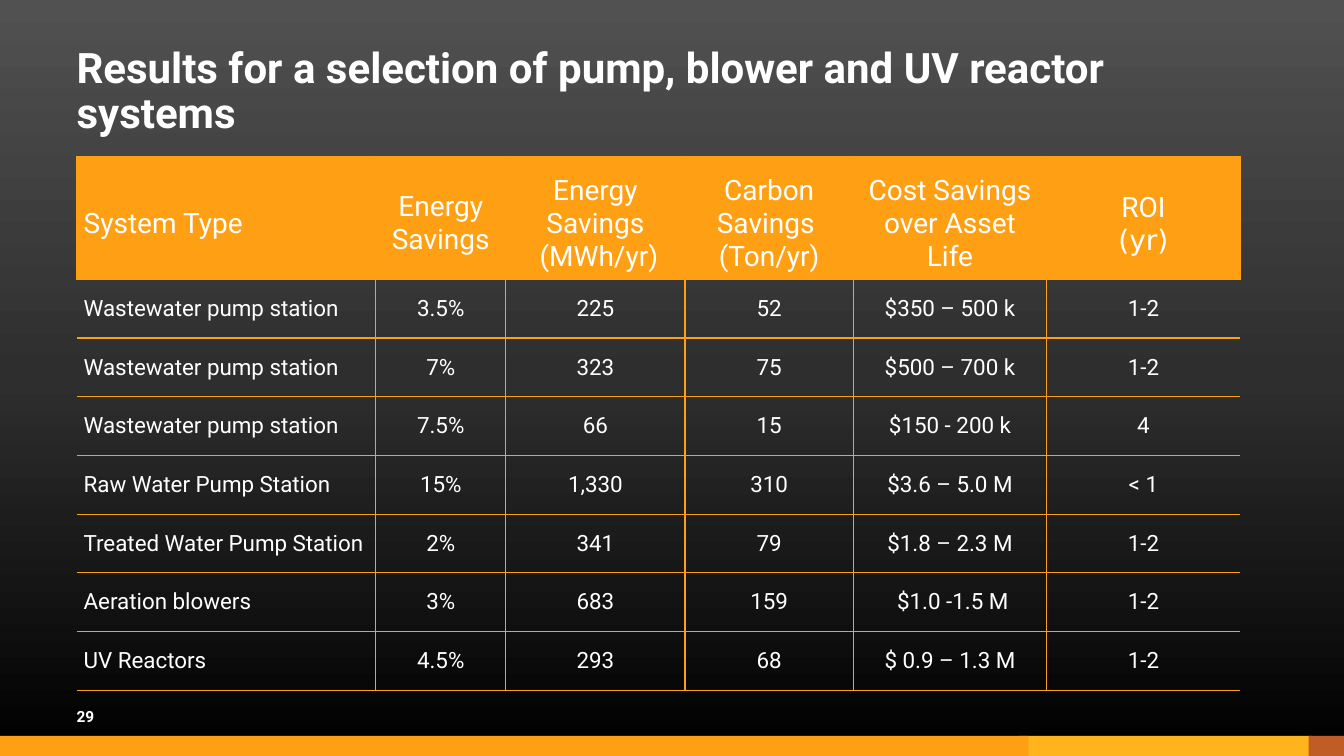
from copy import deepcopy
from dataclasses import dataclass

from pptx import Presentation, util as u
from pptx.dml.color import RGBColor
from pptx.enum import shapes, text
from pptx.oxml import parse_xml
from pptx.oxml.ns import nsdecls, qn


@dataclass(frozen=True)
class Theme:
    orange: str = "FFA014"
    amber: str = "FFB41E"
    rust: str = "C05D27"
    white: str = "FFFFFF"
    backdrop: tuple = ("515151", "2E2E2E", "000000")
    font: str = "Roboto"
    unit_font: str = "DejaVu Sans"
    title: int = 30
    header: int = 20
    body: int = 16
    number: int = 11


T = Theme()
W, H = u.Inches(13.33), u.Inches(7.5)
LEFT = 5.7
COLUMNS = [2.97, 1.29, 1.78, 1.67, 1.92, 1.92]
ROWS = [21] + [10] * 7
HEADER = ["System Type", "Energy Savings", "Energy Savings\n (MWh/yr)",
          "Carbon Savings \n(Ton/yr)", "Cost Savings over Asset Life", "ROI\n(yr)"]
SYSTEMS = [
    ["Wastewater pump station", "3.5%", "225", "52", "$350 – 500 k", "1-2"],
    ["Wastewater pump station", "7%", "323", "75", "$500 – 700 k", "1-2"],
    ["Wastewater pump station", "7.5%", "66", "15", "$150 - 200 k", "4"],
    ["Raw Water Pump Station", "15%", "1,330", "310", "$3.6 – 5.0 M", "< 1"],
    ["Treated Water Pump Station", "2%", "341", "79", "$1.8 – 2.3 M", "1-2"],
    ["Aeration blowers", "3%", "683", "159", " $1.0 -1.5 M", "1-2"],
    ["UV Reactors", "4.5%", "293", "68", "$ 0.9 – 1.3 M", "1-2"],
]


def box(left, top, width, height):
    return [round(share * side / 100)
            for share, side in zip((left, top, width, height), (W, H, W, H))]


def rgb(color):
    return RGBColor.from_string(color)


def format_paragraph(p, size, bold=False, align=text.PP_ALIGN.LEFT):
    p.alignment = align
    p.font.name, p.font.size, p.font.bold = T.font, u.Pt(size), bold
    p.font.color.rgb = rgb(T.white)


def set_background(s):
    fill = s.background.fill
    fill.gradient()
    fill.gradient_angle = 270
    stops = s._element.find(".//" + qn("a:gsLst"))
    stops.insert(1, deepcopy(stops[0]))
    for stop, color, position in zip(fill.gradient_stops, T.backdrop, (0, 0.5, 1)):
        stop.color.rgb = rgb(color)
        stop.position = position


def add_bar(s, left, width, color):
    sp = s.shapes.add_shape(shapes.MSO_SHAPE.RECTANGLE, *box(left, 97.33, width, 2.67))
    sp.shadow.inherit = False
    sp.fill.solid()
    sp.fill.fore_color.rgb = rgb(color)
    sp.line.fill.background()


def fill_text(sp, words, size, anchor):
    tf = sp.text_frame
    tf.text = words
    tf.word_wrap = True
    tf.auto_size = text.MSO_AUTO_SIZE.NONE
    tf.vertical_anchor = anchor
    tf.margin_left = tf.margin_right = tf.margin_top = tf.margin_bottom = 0
    p = tf.paragraphs[0]
    format_paragraph(p, size, True)
    return p


def add_title(s, words):
    sp = s.shapes.title
    sp.left, sp.top, sp.width, sp.height = box(LEFT, 8, 88.6, 8.4)
    fill_text(sp, words, T.title, text.MSO_ANCHOR.MIDDLE).line_spacing = 0.9


def add_slide_number(s, number):
    sp = s.shapes.add_textbox(*box(LEFT, 92, 6, 4))
    fill_text(sp, number, T.number, text.MSO_ANCHOR.BOTTOM)


def set_borders(cell, open_sides):
    tc_pr = cell._tc.get_or_add_tcPr()
    for i, side in enumerate("LRTB"):
        paint = ("<a:noFill/>" if side in open_sides else
                 f'<a:solidFill><a:srgbClr val="{T.orange}"/></a:solidFill>')
        tc_pr.insert(i, parse_xml(
            f'<a:ln{side} {nsdecls("a")} w="{u.Pt(1)}">{paint}</a:ln{side}>'))


def format_cell(cell, words, is_header, column):
    cell.text = words
    cell.vertical_anchor = text.MSO_ANCHOR.MIDDLE
    cell.margin_left = cell.margin_right = u.Inches(0.07)
    cell.margin_top = u.Inches(0.12 if is_header else 0)
    cell.margin_bottom = 0
    for p in cell.text_frame.paragraphs:
        format_paragraph(p, T.header if is_header else T.body,
                         align=text.PP_ALIGN.CENTER if column else text.PP_ALIGN.LEFT)
        if not is_header:
            p.space_before = p.space_after = u.Pt(6)
    if is_header:
        cell.fill.solid()
        cell.fill.fore_color.rgb = rgb(T.orange)
    else:
        cell.fill.background()
    outer = {0: "L", len(COLUMNS) - 1: "R"}
    set_borders(cell, "" if is_header else outer.get(column, ""))


def add_results_table(s):
    left, top, width, height = box(LEFT, 20.65, 86.58, 70.67)
    table = s.shapes.add_table(len(ROWS), len(COLUMNS), left, top, width, height).table
    table.first_row = table.horz_banding = False
    for column, weight in zip(table.columns, COLUMNS):
        column.width = round(width * weight / sum(COLUMNS))
    for row, weight in zip(table.rows, ROWS):
        row.height = round(height * weight / sum(ROWS))
    for r, values in enumerate([HEADER] + SYSTEMS):
        for c, words in enumerate(values):
            format_cell(table.cell(r, c), words, r == 0, c)
    table.cell(0, len(COLUMNS) - 1).text_frame.paragraphs[1].runs[0].font.name = T.unit_font


def main():
    prs = Presentation()
    prs.slide_width, prs.slide_height = W, H
    s = prs.slides.add_slide(prs.slide_layouts[5])
    set_background(s)
    add_bar(s, 75.84, 21.76, T.amber)
    add_bar(s, 97.37, 2.63, T.rust)
    add_bar(s, 0, 76.52, T.orange)
    add_title(s, "Results for a selection of pump, blower and UV reactor systems")
    add_slide_number(s, "29")
    add_results_table(s)
    prs.save("out.pptx")


if __name__ == "__main__":
    main()
